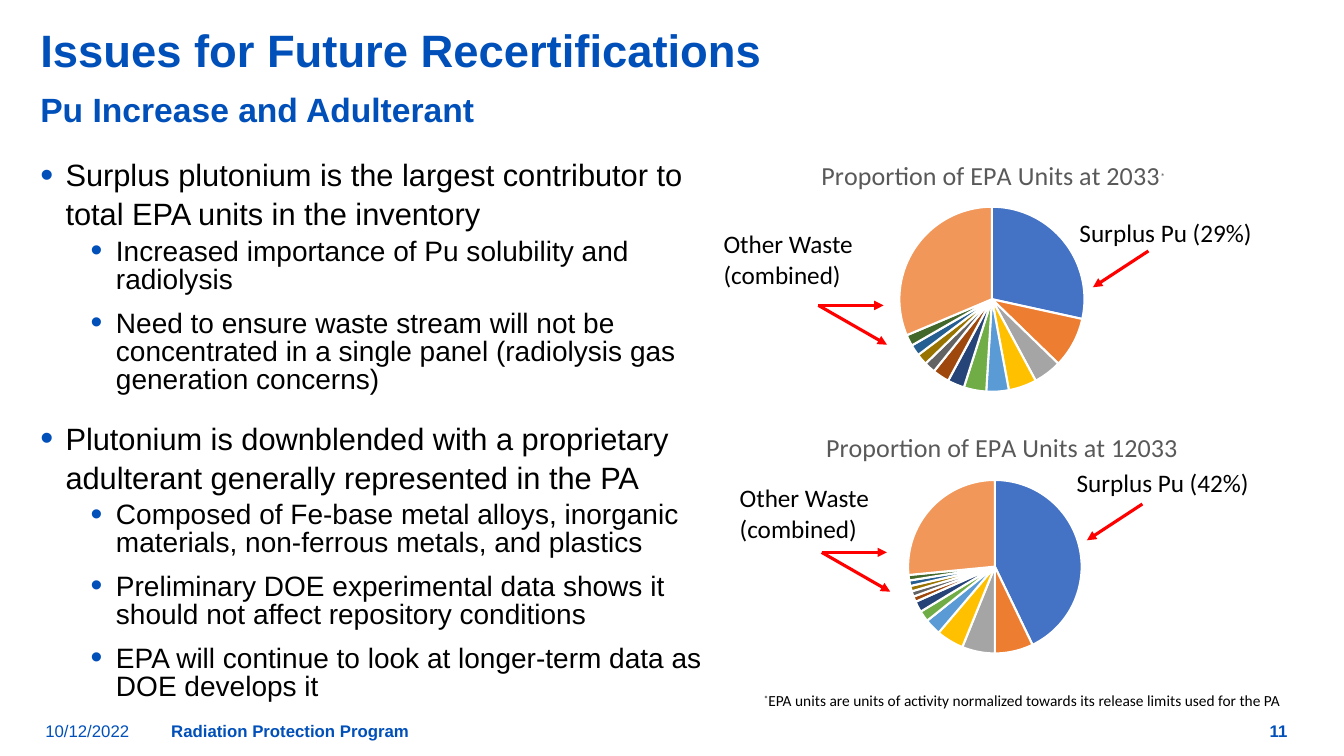
from lxml import etree
from pptx import Presentation, util as u
from pptx.chart.data import CategoryChartData
from pptx.dml.color import RGBColor
from pptx.enum import chart as charts, shapes, text
from pptx.oxml import ns, xmlchemy

WIDE, HIGH = u.Inches(13.33), u.Inches(7.5)
HUES = {"blue": "0150B9", "ink": "000000", "gray": "595959", "red": "FF0000", "white": "FFFFFF"}
SLICES = ("4472C4 ED7D31 A5A5A5 FFC000 5B9BD5 70AD47 264478 "
          "9E480E 636363 997300 255E91 43682B 698ED0 F1975A").split()
POINTS = [
    (0, "Surplus plutonium is the largest contributor to total EPA units in the inventory"),
    (1, "Increased importance of Pu solubility and radiolysis"),
    (1, "Need to ensure waste stream will not be concentrated in a single panel (radiolysis gas generation concerns)"),
    (0, "Plutonium is downblended with a proprietary adulterant generally represented in the PA"),
    (1, "Composed of Fe-base metal alloys, inorganic materials, non-ferrous metals, and plastics"),
    (1, "Preliminary DOE experimental data shows it should not affect repository conditions"),
    (1, "EPA will continue to look at longer-term data as DOE develops it"),
]


def across(share):
    return round(WIDE * share / 100)


def down(share):
    return round(HIGH * share / 100)


def area(box):
    left, top, wide, high = box
    return across(left), down(top), across(wide), down(high)


def style(font, size, hue, face="Arial", bold=False):
    font.size, font.name, font.bold = u.Pt(size), face, bold
    font.color.rgb = RGBColor.from_string(HUES[hue])


def raise_star(run):
    run.font._element.set("baseline", "30000")


def add_node(parent, tag, **attrs):
    node = etree.SubElement(parent, ns.qn(tag))
    for name, value in attrs.items():
        node.set(name, str(value))
    return node


def place(holder, box):
    holder.left, holder.top, holder.width, holder.height = area(box)
    frame = holder.text_frame
    frame.auto_size = text.MSO_AUTO_SIZE.NONE
    frame.vertical_anchor = text.MSO_ANCHOR.TOP
    return frame


def heading(holder, box, words, size):
    para = place(holder, box).paragraphs[0]
    para.text = words
    para.alignment = text.PP_ALIGN.LEFT
    para.line_spacing, para.space_before = 0.9, u.Pt(0)
    props = para._p.get_or_add_pPr()
    props.set("marL", "0")
    props.set("indent", "0")
    add_node(props, "a:buNone")
    style(para.font, size, "blue", bold=True)


def bullets(holder, box):
    frame = place(holder, box)
    for i, (level, words) in enumerate(POINTS):
        para = frame.add_paragraph() if i else frame.paragraphs[0]
        para.text, para.level = words, level
        para.line_spacing = 0.84 if level else 1.05
        para.space_before = u.Pt((5 if level else 10) if i else 0)
        para.space_after = u.Pt(6 if level else 0)
        props = para._p.get_or_add_pPr()
        props.set("marL", str(u.Inches(0.75 if level else 0.25)))
        props.set("indent", str(u.Inches(-0.25)))
        add_node(add_node(props, "a:buClr"), "a:srgbClr", val=HUES["blue"])
        add_node(props, "a:buSzPct", val=120000)
        add_node(props, "a:buFont", typeface="Arial")
        add_node(props, "a:buChar", char="•")
        style(para.font, 20 if level else 22, "ink")


def label(slide, box, words, size=18, hue="ink", face="Calibri", bold=False, wrap=True, mid=False, right=False):
    frame = slide.shapes.add_textbox(*area(box)).text_frame
    frame.word_wrap = wrap
    if mid:
        frame.vertical_anchor = text.MSO_ANCHOR.MIDDLE
    para = frame.paragraphs[0]
    para.alignment = text.PP_ALIGN.RIGHT if right else text.PP_ALIGN.LEFT
    if words.startswith("*"):
        star = para.add_run()
        star.text, words = "*", words[1:]
        raise_star(star)
    para.add_run().text = words
    style(para.font, size, hue, face, bold)


def arrow(slide, start, step):
    (left, top), (run, drop) = start, step
    line = slide.shapes.add_connector(
        shapes.MSO_CONNECTOR.STRAIGHT, across(left), down(top), across(left + run), down(top + drop))
    line.line.color.rgb = RGBColor.from_string(HUES["red"])
    line.line.width = u.Pt(2.25)
    add_node(line.line._get_or_add_ln(), "a:tailEnd", type="triangle")
    add_node(line._element.spPr, "a:effectLst")


def layout(parent, spots, inner=False):
    for old in parent.findall(ns.qn("c:layout")):
        parent.remove(old)
    node = xmlchemy.OxmlElement("c:layout")
    manual = add_node(node, "c:manualLayout")
    if inner:
        add_node(manual, "c:layoutTarget", val="inner")
    for key in "xy":
        add_node(manual, f"c:{key}Mode", val="edge")
    for key, value in zip("xywh", spots):
        add_node(manual, f"c:{key}", val=value)
    return node


def pie(slide, box, title, values, head, plot):
    data = CategoryChartData()
    data.categories = [str(i + 1) for i in range(len(values))]
    data.add_series(title.rstrip("*"), values)
    chart = slide.shapes.add_chart(charts.XL_CHART_TYPE.PIE, *area(box), data).chart
    chart.has_legend = False
    style(chart.font, 10, "ink", "Calibri")
    para = chart.chart_title.text_frame.paragraphs[0]
    style(para.font, 18.6, "gray", "Calibri")
    para.add_run().text = title.rstrip("*")
    if title.endswith("*"):
        star = para.add_run()
        star.text = "*"
        raise_star(star)
    for run in para.runs:
        style(run.font, 18.6 if run.text != "*" else 12, "gray", "Calibri")
    top = chart.chart_title._element
    spot = layout(top, head)
    top.find(ns.qn("c:tx")).addnext(spot)
    field = chart._chartSpace.chart.plotArea
    field.insert(0, layout(field, plot, True))
    chart.plots[0].vary_by_categories = True
    for i, hue in enumerate(SLICES):
        part = chart.plots[0].series[0].points[i].format
        part.fill.solid()
        part.fill.fore_color.rgb = RGBColor.from_string(hue)
        part.line.color.rgb = RGBColor.from_string(HUES["white"])
        part.line.width = u.Pt(1.5)


def notes(slide, share, main, other, point, fork):
    label(slide, (*main, 14.48, 5.33), f"Surplus Pu ({share}%)", wrap=False)
    label(slide, (*other, 11.33, 9.47), "Other Waste (combined)")
    arrow(slide, point, (-4.13, 4.8))
    for step in ((4.85, 0), (5.1, 5.2)):
        arrow(slide, fork, step)


def main():
    deck = Presentation()
    deck.slide_width, deck.slide_height = WIDE, HIGH
    slide = deck.slides.add_slide(deck.slide_layouts[3])
    title, body, sub = slide.placeholders
    heading(title, (2.25, 3.07, 94.35, 7.6), "Issues for Future Recertifications", 32.4)
    heading(sub, (2.25, 11.73, 94.35, 5.33), "Pu Increase and Adulterant", 24)
    bullets(body, (2.25, 19.73, 53.1, 74.93))
    pie(slide, (52.28, 18.4, 43.05, 35.33), "Proportion of EPA Units at 2033*",
        (29, 9, 5, 5, 4, 4, 3, 3, 2, 2, 2, 2, 0, 32), (0.2, 0.06), (0.34, 0.25, 0.32, 0.7))
    pie(slide, (52.5, 53.73, 43.05, 34.53), "Proportion of EPA Units at 12033",
        (42, 7, 6, 5, 3, 2, 2, 1, 1, 1, 1, 1, 0, 26), (0.2, 0.07), (0.35, 0.28, 0.3, 0.67))
    notes(slide, 29, (79.58, 28.13), (53.1, 29.6), (85.45, 33.2), (60.9, 40.4))
    notes(slide, 42, (79.36, 61.2), (54.3, 63.2), (85, 66.67), (61.14, 73.07))
    label(slide, (56.1, 90.8, 40.4, 3.87),
          "*EPA units are units of activity normalized towards its release limits used for the PA", 11, wrap=False)
    for left, wide, words, bold, right in (
            (2.63, 9.3, "10/12/2022", False, False),
            (12, 60, "Radiation Protection Program", True, False),
            (74.03, 22.5, "11", True, True)):
        label(slide, (left, 94, wide, 5.33), words, 12, "blue", "Arial", bold, mid=True, right=right)
    deck.save("out.pptx")


if __name__ == "__main__":
    main()
